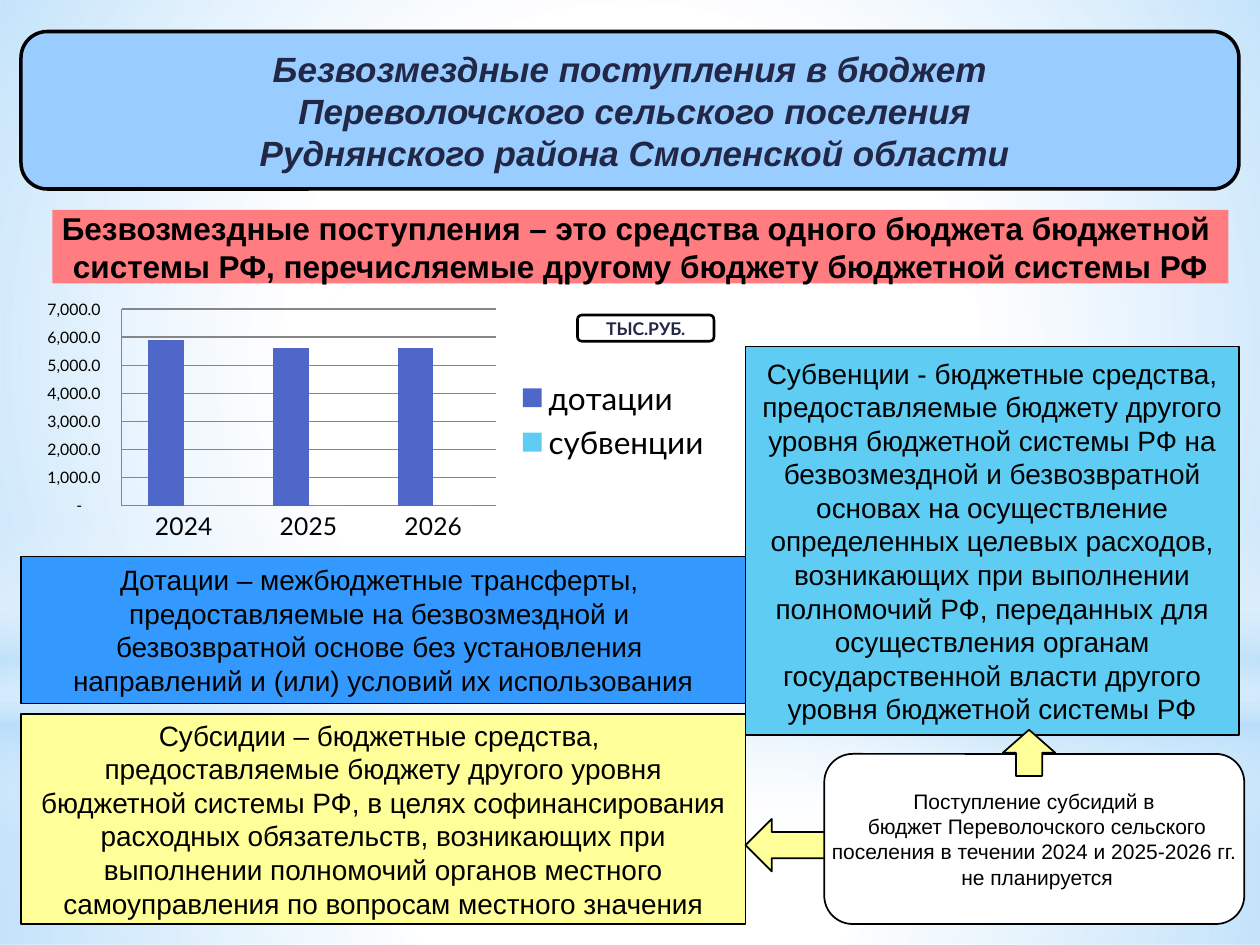
from lxml import etree
from pptx import Presentation, util as u
from pptx.chart.data import CategoryChartData
from pptx.dml.color import RGBColor
from pptx.enum import chart as charts, shapes, text
from pptx.oxml import parse_xml
from pptx.oxml.ns import nsdecls, qn

PX = u.Inches(1) // 120
COLORS = {
    "white": "FFFFFF", "black": "000000", "navy": "212745", "mist": "B4DCFA",
    "title": "99CCFF", "coral": "FF7C80", "blue": "3399FF", "cyan": "5ECCF3",
    "yellow": "FFFF99", "series": "4E67C8", "grid": "868686",
}
KIND = shapes.MSO_SHAPE

TITLE = ["Безвозмездные поступления в бюджет",
         " Переволочского сельского поселения",
         " Руднянского района Смоленской области"]
DEFINITION = ["Безвозмездные поступления – это средства одного бюджета бюджетной ",
              "системы РФ, перечисляемые другому бюджету бюджетной системы РФ"]
GRANTS = ["Дотации – межбюджетные трансферты, ",
          "предоставляемые на безвозмездной и ",
          "безвозвратной основе без установления ",
          "направлений и (или) условий их использования"]
SUBVENTIONS = ["Субвенции - бюджетные средства,", "предоставляемые бюджету другого",
               "уровня бюджетной системы РФ на", "безвозмездной и безвозвратной",
               "основах на осуществление", "определенных целевых расходов,",
               "возникающих при выполнении", "полномочий РФ, переданных для",
               "осуществления органам", "государственной власти другого",
               "уровня бюджетной системы РФ"]
SUBSIDIES = ["Субсидии – бюджетные средства, ",
             "предоставляемые бюджету другого уровня",
             "бюджетной системы РФ, в целях софинансирования",
             "расходных обязательств, возникающих при",
             "выполнении полномочий органов местного",
             "самоуправления по вопросам местного значения"]
NOTE = ["Поступление субсидий в", " бюджет Переволочского сельского",
        "поселения в течении 2024 и 2025-2026 гг.", " не планируется"]


def color(name):
    return RGBColor.from_string(COLORS[name])


def set_font(font, tint="black", **values):
    for key, value in values.items():
        setattr(font, key, value)
    font.color.rgb = color(tint)


def add_panel(page, box, fill, kind=KIND.RECTANGLE, line=None, lines=(), **font):
    """A filled shape with one centred paragraph per line of text."""
    panel = page.shapes.add_shape(kind, *(n * PX for n in box))
    panel.shadow.inherit = False
    panel.fill.solid()
    panel.fill.fore_color.rgb = color(fill)
    if line:
        panel.line.color.rgb = color("black")
        panel.line.width = u.Pt(line)
    else:
        panel.line.fill.background()
    frame = panel.text_frame
    frame.word_wrap = False
    frame.vertical_anchor = text.MSO_ANCHOR.MIDDLE
    for index, words in enumerate(lines):
        para = frame.paragraphs[0] if index == 0 else frame.add_paragraph()
        para.alignment = text.PP_ALIGN.CENTER
        span = para.add_run()
        span.text = words
        set_font(span.font, **font)
    return panel


def add_glow(page, box, stops, radial=True, kind=KIND.RECTANGLE):
    """A shape with a see-through gradient; stops are position, colour, opacity."""
    glow = add_panel(page, box, "white", kind)
    marks = "".join(
        f'<a:gs pos="{at * 1000}"><a:srgbClr val="{COLORS[name]}">'
        f'<a:alpha val="{opacity * 1000}"/></a:srgbClr></a:gs>'
        for at, name, opacity in stops)
    course = ('<a:path path="circle"><a:fillToRect l="50000" t="50000" r="50000" b="50000"/>'
              '</a:path>' if radial else '<a:lin ang="5400000" scaled="0"/>')
    gradient = parse_xml(f'<a:gradFill {nsdecls("a")} rotWithShape="1">'
                         f'<a:gsLst>{marks}</a:gsLst>{course}</a:gradFill>')
    solid = glow._element.spPr.find(qn("a:solidFill"))
    solid.getparent().replace(solid, gradient)


def add_backdrop(page, box):
    left, top, width, height = box
    horizon = top + 670
    add_glow(page, (left, horizon, width, height - 670),
             [(0, "white", 91), (37, "white", 76), (100, "mist", 79)])
    add_glow(page, (left, top, width, 670),
             [(0, "white", 89), (48, "white", 62), (100, "mist", 79)])
    add_glow(page, (left, top + 494, width, 300),
             [(0, "white", 0), (29, "white", 30), (45, "mist", 40),
              (55, "white", 26), (65, "mist", 60), (100, "white", 0)], radial=False)
    add_glow(page, (left, top + 210, width, 670),
             [(0, "white", 100), (56, "white", 0)], kind=KIND.OVAL)


def add_income_chart(page, box):
    data = CategoryChartData()
    data.categories = ["2024", "2025", "2026"]
    data.add_series("дотации", (5900, 5600, 5600))
    data.add_series("субвенции", (0, 0, 0))
    chart = page.shapes.add_chart(charts.XL_CHART_TYPE.COLUMN_CLUSTERED,
                                  *(n * PX for n in box), data).chart
    set_font(chart.font, name="Lato", size=u.Pt(18))
    chart.has_title = False
    chart.has_legend = True
    chart.legend.position = charts.XL_LEGEND_POSITION.RIGHT
    chart.legend.include_in_layout = False

    plot = chart.plots[0]
    plot.gap_width, plot.overlap, plot.vary_by_categories = 150, 0, False
    for series, tint in zip(plot.series, ("series", "cyan")):
        series.format.fill.solid()
        series.format.fill.fore_color.rgb = color(tint)

    years, amounts = chart.category_axis, chart.value_axis
    for axis, size in ((years, 14), (amounts, 9)):
        axis.major_tick_mark = charts.XL_TICK_MARK.NONE
        axis.format.line.color.rgb = color("grid")
        set_font(axis.tick_labels.font, name="Lato", size=u.Pt(size))
    amounts.minimum_scale, amounts.maximum_scale, amounts.major_unit = 0, 7000, 1000
    amounts.major_gridlines.format.line.color.rgb = color("grid")
    amounts.tick_labels.number_format = (
        r'_-* #,##0.0\ _₽_-;\-* #,##0.0\ _₽_-;_-* "-"??\ _₽_-;_-@_-')
    amounts.tick_labels.number_format_is_linked = False

    # Fixed place of the plot inside the chart
    area = chart._chartSpace.chart.plotArea
    for old in area.findall(qn("c:layout")):
        area.remove(old)
    layout = etree.Element(qn("c:layout"))
    manual = etree.SubElement(layout, qn("c:manualLayout"))
    for tag, value in (("layoutTarget", "inner"), ("xMode", "edge"), ("yMode", "edge"),
                       ("x", "0.13"), ("y", "0.06"), ("w", "0.54"), ("h", "0.78")):
        etree.SubElement(manual, qn(f"c:{tag}")).set("val", value)
    area.insert(0, layout)


def add_header(page, box):
    left, top, width, _ = box
    add_panel(page, (left, top, width, 150), "title", KIND.ROUNDED_RECTANGLE, 2, TITLE,
              tint="navy", name="Arial", size=u.Pt(20), bold=True, italic=True)
    add_panel(page, (left + 530, top + 270, 130, 25), "white", KIND.ROUNDED_RECTANGLE,
              1.5, ["ТЫС.РУБ."], tint="navy", name="Lato", size=u.Pt(10), bold=True)
    add_panel(page, (left + 30, top + 170, 1120, 70), "coral", lines=DEFINITION,
              name="Arial", size=u.Pt(18), bold=True)


def add_transfers(page, box):
    """Definitions of the transfers, and the note that points to two of them."""
    left, top, _, _ = box
    for place, fill, lines in (((0, 200, 690, 140), "blue", GRANTS),
                               ((690, 0, 470, 370), "cyan", SUBVENTIONS),
                               ((0, 350, 690, 200), "yellow", SUBSIDIES)):
        x, y, width, height = place
        add_panel(page, (left + x, top + y, width, height), fill, line=1, lines=lines,
                  name="Arial", size=u.Pt(16))
    add_panel(page, (left + 690, top + 450, 100, 50), "yellow", KIND.LEFT_ARROW, 1)
    add_panel(page, (left + 765, top + 388, 400, 162), "white", KIND.ROUNDED_RECTANGLE,
              1, NOTE, name="Arial", size=u.Pt(12))
    arrow = add_panel(page, (left + 938, top + 362, 44, 50), "yellow", KIND.LEFT_ARROW, 1)
    arrow.rotation = 90


def main():
    deck = Presentation()
    deck.slide_width, deck.slide_height = 1200 * PX, 900 * PX
    page = deck.slides.add_slide(deck.slide_layouts[6])
    add_backdrop(page, (0, 0, 1200, 900))
    add_income_chart(page, (30, 280, 660, 240))
    add_header(page, (20, 30, 1160, 270))
    add_transfers(page, (20, 330, 1160, 550))
    deck.save("out.pptx")


if __name__ == "__main__":
    main()
